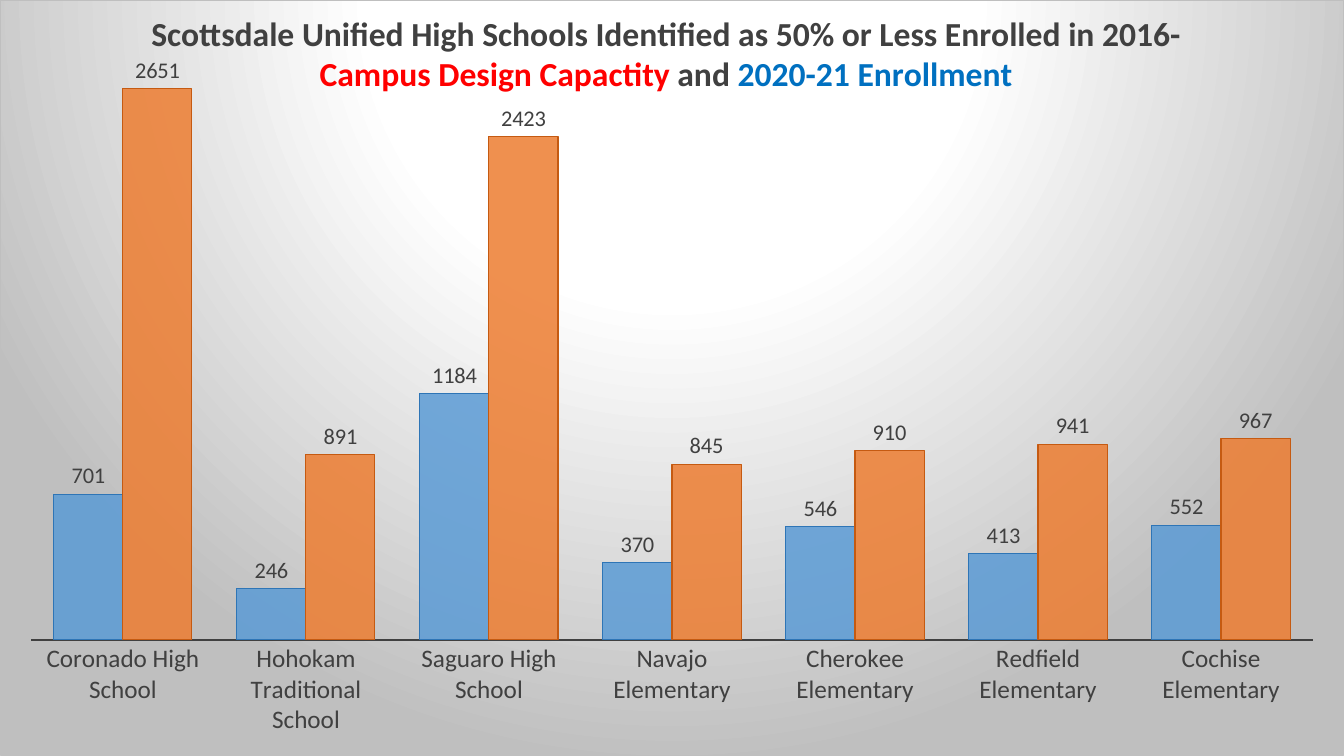
from pptx import Presentation
from pptx.chart.data import CategoryChartData
from pptx.dml.color import RGBColor
from pptx.enum.chart import XL_CHART_TYPE, XL_LABEL_POSITION, XL_TICK_MARK
from pptx.oxml import parse_xml
from pptx.oxml.ns import nsdecls
from pptx.util import Inches, Pt

FONT = "Calibri"
INK = "404040"
SLIDE_WIDTH, SLIDE_HEIGHT = Inches(13.33), Inches(7.5)

TITLE_LINES = [
    [("Scottsdale Unified High Schools Identified as 50% or Less Enrolled in 2016-", INK)],
    [("Campus Design Capactity", "FF0000"), (" and ", INK), ("2020-21 Enrollment", "0070C0")],
]
TITLE_POSITION = {"x": 0.11, "y": 0.012}
PLOT_POSITION = {"x": 0.023, "y": 0.021, "w": 0.954, "h": 0.826}

SCHOOLS = [
    "Coronado High School", "Hohokam Traditional School", "Saguaro High School",
    "Navajo Elementary", "Cherokee Elementary", "Redfield Elementary",
    "Cochise Elementary",
]
# name, values, fill, outline
SERIES = [
    ("Series 1", (701, 246, 1184, 370, 546, 413, 552), "5B9BD5", "2E75B6"),
    ("Series 2", (2651, 891, 2423, 845, 910, 941, 967), "ED7D31", "C55A11"),
]
BACKGROUND_STOPS = [(0, "FFFFFF"), (39, "FFFFFF"), (100, "BFBFBF")]


def rgb(color):
    return RGBColor.from_string(color)


def format_font(font, size, color=INK, bold=False):
    font.name, font.size, font.bold = FONT, Pt(size), bold
    font.color.rgb = rgb(color)


def add_text(paragraph, text, **font_format):
    run = paragraph.add_run()
    run.text = text
    format_font(run.font, **font_format)


def set_line(line, color, width):
    line.color.rgb = rgb(color)
    line.width = Pt(width)


def manual_layout(position, inner=False):
    """Chart layout element from fractions of the chart's size."""
    target = '<c:layoutTarget val="inner"/>' if inner else ""
    modes = "".join(f'<c:{key}Mode val="edge"/>' for key in "xy")
    places = "".join(f'<c:{key} val="{value}"/>' for key, value in position.items())
    return parse_xml(
        f'<c:layout {nsdecls("c")}><c:manualLayout>{target}{modes}{places}'
        "</c:manualLayout></c:layout>"
    )


def add_background(chart):
    stops = "".join(
        f'<a:gs pos="{percent * 1000}"><a:srgbClr val="{color}"/></a:gs>'
        for percent, color in BACKGROUND_STOPS
    )
    background = parse_xml(
        f'<c:spPr {nsdecls("c", "a")}><a:gradFill><a:gsLst>{stops}</a:gsLst>'
        '<a:path path="circle">'
        '<a:fillToRect l="50000" t="-80000" r="50000" b="180000"/></a:path></a:gradFill>'
        f'<a:ln w="{Pt(0.75)}"><a:solidFill><a:srgbClr val="BFBFBF"/></a:solidFill></a:ln>'
        "</c:spPr>"
    )
    chart._chartSpace.xpath("c:chart")[0].addnext(background)


def add_title(chart):
    frame = chart.chart_title.text_frame
    for index, line in enumerate(TITLE_LINES):
        paragraph = frame.add_paragraph() if index else frame.paragraphs[0]
        for text, color in line:
            add_text(paragraph, text, size=24, color=color, bold=True)
    title = chart._chartSpace.xpath("c:chart/c:title")[0]
    for layout in title.xpath("c:layout"):
        title.remove(layout)
    title.xpath("c:tx")[0].addnext(manual_layout(TITLE_POSITION))
    title.xpath("c:overlay")[0].set("val", "1")


def format_axes(chart):
    schools = chart.category_axis
    schools.major_tick_mark = schools.minor_tick_mark = XL_TICK_MARK.NONE
    schools.has_major_gridlines = False
    format_font(schools.tick_labels.font, size=18)
    set_line(schools.format.line, INK, 1.5)
    students = chart.value_axis
    students.minimum_scale, students.maximum_scale = 0, 3000
    students.has_major_gridlines = False
    students.visible = False


def format_series(series, fill, outline):
    series.invert_if_negative = False
    series.format.fill.solid()
    series.format.fill.fore_color.rgb = rgb(fill)
    fill_color = series._element.xpath("c:spPr/a:solidFill/a:srgbClr")[0]
    fill_color.append(parse_xml(f'<a:alpha {nsdecls("a")} val="85000"/>'))
    set_line(series.format.line, outline, 0.75)
    labels = series.data_labels
    labels.show_value = True
    labels.position = XL_LABEL_POSITION.OUTSIDE_END
    format_font(labels.font, size=16)


def main():
    presentation = Presentation()
    presentation.slide_width, presentation.slide_height = SLIDE_WIDTH, SLIDE_HEIGHT
    slide = presentation.slides.add_slide(presentation.slide_layouts[6])

    enrollment = CategoryChartData()
    enrollment.categories = SCHOOLS
    for name, values, *_ in SERIES:
        enrollment.add_series(name, values)
    chart = slide.shapes.add_chart(
        XL_CHART_TYPE.COLUMN_CLUSTERED, 0, 0, SLIDE_WIDTH, SLIDE_HEIGHT, enrollment
    ).chart
    format_font(chart.font, size=10, color="000000")
    chart.has_legend = False

    add_background(chart)
    add_title(chart)
    format_axes(chart)
    plot = chart.plots[0]
    plot.gap_width, plot.overlap, plot.vary_by_categories = 65, 0, False
    for series, (_, _, fill, outline) in zip(plot.series, SERIES):
        format_series(series, fill, outline)

    plot_area = chart._chartSpace.xpath("c:chart/c:plotArea")[0]
    for layout in plot_area.xpath("c:layout"):
        plot_area.remove(layout)
    plot_area.insert(0, manual_layout(PLOT_POSITION, inner=True))

    presentation.save("out.pptx")


if __name__ == "__main__":
    main()
